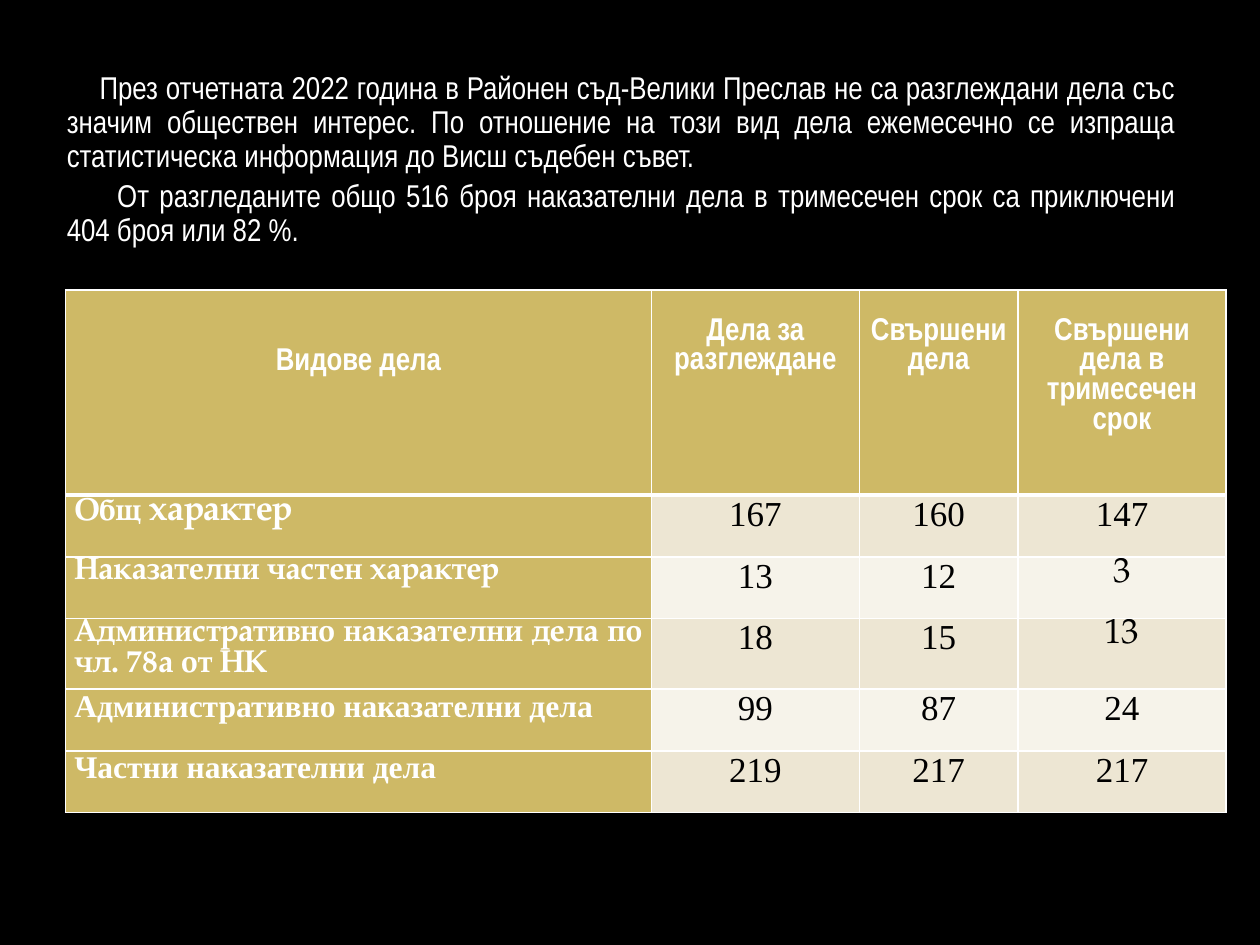
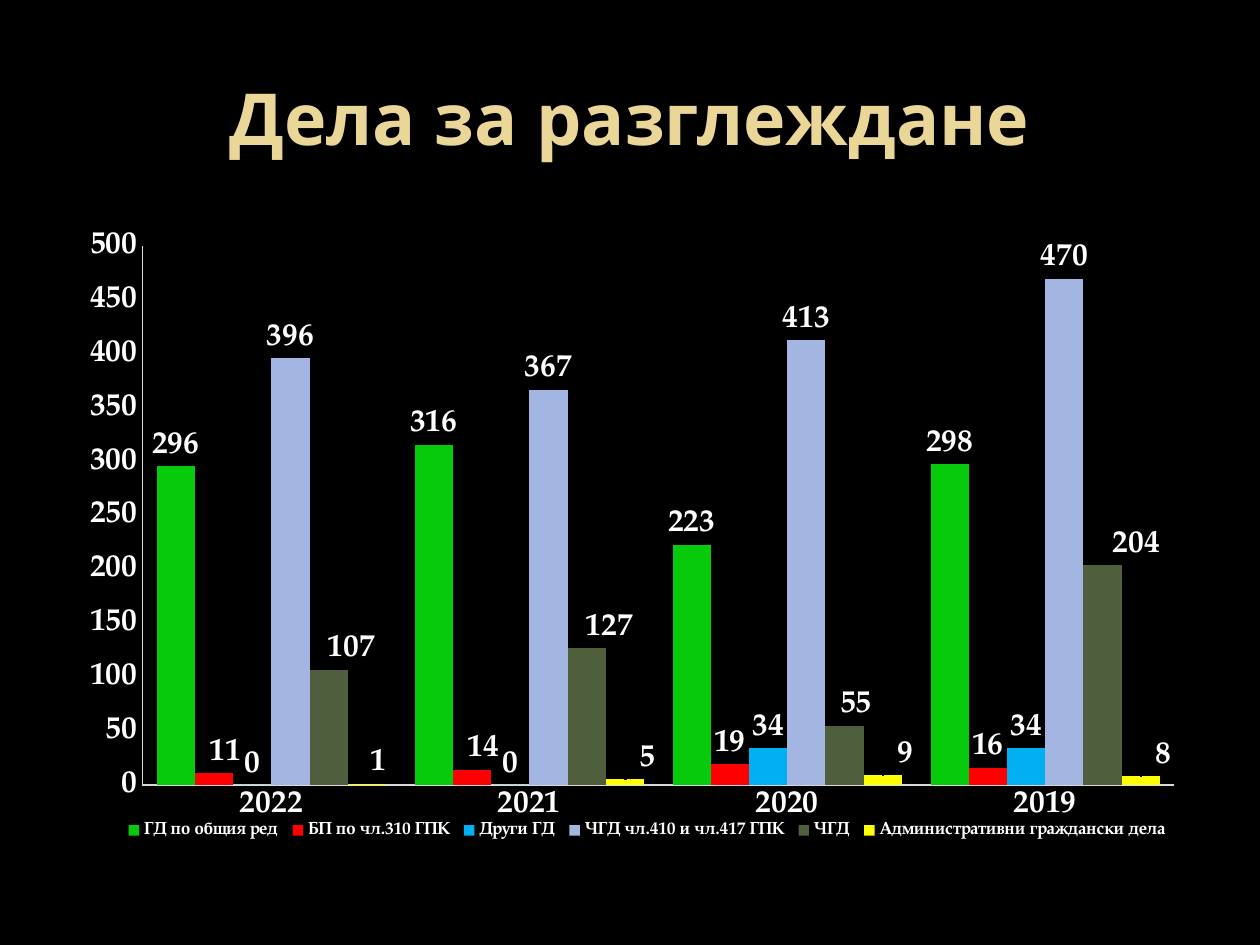
from dataclasses import dataclass, replace

from lxml import etree
from pptx import Presentation
from pptx.chart.data import CategoryChartData
from pptx.dml.color import RGBColor
from pptx.enum.chart import XL_CHART_TYPE as Kind
from pptx.enum.chart import XL_LABEL_POSITION as Spot
from pptx.enum.chart import XL_LEGEND_POSITION as Side
from pptx.enum.chart import XL_TICK_MARK as Tick
from pptx.enum.text import MSO_ANCHOR as Anchor
from pptx.enum.text import MSO_AUTO_SIZE as Fit
from pptx.enum.text import PP_ALIGN as Align
from pptx.oxml import parse_xml
from pptx.oxml.ns import qn
from pptx.util import Inches, Pt

BLACK, WHITE, GREY = "000000", "FFFFFF", "D9D9D9"
GOLD, SAND, CREAM, PALE = "CEB966", "EDE6D3", "F6F3EA", "EAD696"
NARROW, SANS = "Arial Narrow", "Open Sans"
PAGELLA, TIMES = "TeX Gyre Pagella", "Times New Roman"


@dataclass(frozen=True)
class Style:
    face: str
    size: float
    color: str = WHITE
    bold: bool = False
    align: Align = Align.CENTER
    lead: float = 1.0


@dataclass(frozen=True)
class Case:
    """A table row: label, its typeface, counts and the typeface of the last count."""
    label: str
    face: str
    counts: tuple[int, int, int]
    last: str = TIMES
    tail: str = ""


@dataclass(frozen=True)
class Group:
    """A chart series; shifts moves labels sideways, as shares of the chart width."""
    name: str
    color: str
    counts: tuple[int, ...]
    shifts: tuple[float, ...] = ()


TITLE = Style(SANS, 41, PALE, True)
BODY = Style(NARROW, 18, align=Align.JUSTIFY, lead=0.9)
HEAD = Style(NARROW, 18, bold=True)
LABEL = Style(PAGELLA, 18, bold=True, align=Align.JUSTIFY)
COUNT = Style(TIMES, 20, BLACK)

NOTES = (
    (0.26, "През отчетната 2022 година в Районен съд-Велики Преслав не са разглеждани "
           "дела със значим обществен интерес. По отношение на този вид дела ежемесечно "
           "се изпраща статистическа информация до Висш съдебен съвет."),
    (0.4, "От разгледаните общо 516 броя наказателни дела в тримесечен срок са "
          "приключени 404 броя или 82 %."),
)
HEADS = ("Видове дела", "Дела за разглеждане", "Свършени дела",
         "Свършени дела в тримесечен срок")
CASES = (
    Case("Общ", PAGELLA, (167, 160, 147), tail=" характер"),
    Case("Наказателни частен характер", PAGELLA, (13, 12, 3), PAGELLA),
    Case("Административно наказателни дела по чл. 78а от НК", PAGELLA,
         (18, 15, 13), PAGELLA),
    Case("Административно наказателни дела", TIMES, (99, 87, 24)),
    Case("Частни наказателни дела", TIMES, (219, 217, 217)),
)
WIDTHS = (4.65, 1.65, 1.26, 1.65)
HEIGHTS = (1.63, 0.49, 0.49, 0.56, 0.49, 0.49)

YEARS = ("2022", "2021", "2020", "2019")
GROUPS = (
    Group("ГД по общия ред", "05CB0A", (296, 316, 223, 298)),
    Group("БП по чл.310 ГПК", "FF0000", (11, 14, 19, 16), (0.01, 0.01)),
    Group("Други ГД", "00B0F0", (0, 0, 34, 34)),
    Group("ЧГД чл.410 и чл.417 ГПК", "A3B6E2", (396, 367, 413, 470)),
    Group("ЧГД", "4F5E3C", (107, 127, 55, 204), (0.02, 0.02, 0.01, 0.03)),
    Group("Административни граждански дела", "FFFF00", (1, 5, 9, 8),
          (0.01, 0.02, 0.02, 0.02)),
)


def rgb(code: str) -> RGBColor:
    return RGBColor.from_string(code)


def dress(font, style: Style) -> None:
    font.name, font.size, font.bold = style.face, Pt(style.size), style.bold
    font.color.rgb = rgb(style.color)


def format_para(para, style: Style) -> None:
    para.alignment, para.line_spacing = style.align, style.lead
    for run in para.runs:
        dress(run.font, style)


def place(shape, left: float, top: float, width: float, height: float) -> None:
    shape.left, shape.top = Inches(left), Inches(top)
    shape.width, shape.height = Inches(width), Inches(height)


def set_borders(cell, top: float, bottom: float) -> None:
    """White cell edges, widths in points."""
    props = cell._tc.get_or_add_tcPr()
    for side, width in (("L", 1), ("R", 1), ("T", top), ("B", bottom)):
        edge = etree.SubElement(props, qn(f"a:ln{side}"), w=str(Pt(width)))
        fill = etree.SubElement(edge, qn("a:solidFill"))
        etree.SubElement(fill, qn("a:srgbClr"), val=WHITE)


def fill_cell(cell, text: str, style: Style, fill: str, top: float = 1,
              bottom: float = 1, inset: float = 0) -> None:
    set_borders(cell, top, bottom)
    cell.fill.solid()
    cell.fill.fore_color.rgb = rgb(fill)
    cell.margin_left = cell.margin_right = Inches(0.07)
    cell.margin_top, cell.margin_bottom = Inches(inset), 0
    cell.text_frame.text = text
    format_para(cell.text_frame.paragraphs[0], style)


def add_notes(slide) -> None:
    body = slide.placeholders[1]
    place(body, 0.43, 0.52, 9, 1.73)
    frame = body.text_frame
    frame.text = "\n".join(text for _, text in NOTES)
    frame.auto_size = Fit.NONE
    for para, (indent, _) in zip(frame.paragraphs, NOTES):
        format_para(para, BODY)
        para.space_before = Pt(3.6)
        props = para._p.get_or_add_pPr()
        props.set("marL", "0")
        props.set("indent", str(Inches(indent)))
        etree.SubElement(props, qn("a:buNone"))


def add_cases(slide) -> None:
    frame = slide.shapes.add_table(len(HEIGHTS), len(WIDTHS), Inches(0.52), Inches(2.3),
                                   Inches(sum(WIDTHS)), Inches(sum(HEIGHTS)))
    table = frame.table
    table.first_row = table.horz_banding = False
    for col, width in zip(table.columns, WIDTHS):
        col.width = Inches(width)
    for row, height in zip(table.rows, HEIGHTS):
        row.height = Inches(height)
    for col, head in enumerate(HEADS):
        fill_cell(table.cell(0, col), head, HEAD, GOLD, bottom=3,
                  inset=0.22 if col else 0.46)
    for row, case in enumerate(CASES, 1):
        top = 3 if row == 1 else 1
        faces = (case.face, TIMES, TIMES, case.last)
        band = SAND if row % 2 else CREAM
        for col, (text, face) in enumerate(zip((case.label, *case.counts), faces)):
            style = replace(COUNT if col else LABEL, face=face)
            fill_cell(table.cell(row, col), str(text), style, band if col else GOLD, top)
        if case.tail:
            run = table.cell(row, 0).text_frame.paragraphs[0].add_run()
            run.text = case.tail
            dress(run.font, replace(LABEL, size=20))


def make_layout(x: float, y: float, w: float = 0, h: float = 0, inner: bool = False):
    """Manual chart layout; without a size it is an offset."""
    parts = '<c:layoutTarget val="inner"/>' if inner else ""
    if w:
        parts += '<c:xMode val="edge"/><c:yMode val="edge"/>'
    parts += f'<c:x val="{x}"/><c:y val="{y}"/>'
    if w:
        parts += f'<c:w val="{w}"/><c:h val="{h}"/>'
    space = "http://schemas.openxmlformats.org/drawingml/2006/chart"
    return parse_xml(f'<c:layout xmlns:c="{space}"><c:manualLayout>{parts}'
                     "</c:manualLayout></c:layout>")


def set_layout(parent, after: str, layout) -> None:
    """Put the layout behind the named child, or first when there is none."""
    for old in parent.findall(qn("c:layout")):
        parent.remove(old)
    mark = parent.find(qn(after)) if after else None
    if mark is None:
        parent.insert(0, layout)
    else:
        mark.addnext(layout)


def style_group(series, group: Group, style: Style) -> None:
    series.format.fill.solid()
    series.format.fill.fore_color.rgb = rgb(group.color)
    series.invert_if_negative = False
    labels = series.data_labels
    labels.show_value, labels.position = True, Spot.OUTSIDE_END
    dress(labels.font, style)
    for index, shift in enumerate(group.shifts):
        label = series.points[index].data_label
        dress(label.font, style)
        label.position = Spot.OUTSIDE_END
        for item in labels._element.findall(qn("c:dLbl")):
            if item.find(qn("c:idx")).get("val") == str(index):
                set_layout(item, "c:idx", make_layout(shift, 0))


def add_bars(slide) -> None:
    data = CategoryChartData()
    data.categories = YEARS
    for group in GROUPS:
        data.add_series(group.name, group.counts)
    chart = slide.shapes.add_chart(Kind.COLUMN_CLUSTERED, Inches(0.5), Inches(1.75),
                                   Inches(9), Inches(5.15), data).chart
    small = Style(PAGELLA, 10, bold=True)
    large = replace(small, size=18)
    dress(chart.font, small)
    chart.has_title = False
    chart.has_legend = True
    legend = chart.legend
    legend.position, legend.include_in_layout = Side.BOTTOM, False
    dress(legend.font, small)
    for axis in (chart.category_axis, chart.value_axis):
        axis.major_tick_mark = axis.minor_tick_mark = Tick.NONE
        axis.has_major_gridlines = False
        axis.format.line.color.rgb = rgb(GREY)
        dress(axis.tick_labels.font, large)
    scale = chart.value_axis
    scale.minimum_scale, scale.maximum_scale, scale.major_unit = 0, 500, 50
    plot = chart.plots[0]
    plot.gap_width, plot.overlap, plot.vary_by_categories = 75, 0, False
    for series, group in zip(plot.series, GROUPS):
        style_group(series, group, large)
    area = chart._chartSpace.chart.plotArea
    set_layout(area, "", make_layout(0.07, 0.04, 0.91, 0.83, inner=True))
    set_layout(legend._element, "c:legendPos", make_layout(0.05, 0.92, 0.93, 0.04))


def add_title(slide, text: str) -> None:
    title = slide.shapes.title
    place(title, 0.5, 0.3, 9, 1.25)
    frame = title.text_frame
    frame.text = text
    frame.auto_size, frame.vertical_anchor = Fit.NONE, Anchor.MIDDLE
    format_para(frame.paragraphs[0], TITLE)


def main() -> None:
    deck = Presentation()
    deck.slide_width, deck.slide_height = Inches(10), Inches(7.5)
    back = deck.slide_master.background.fill
    back.solid()
    back.fore_color.rgb = rgb(BLACK)

    crime = deck.slides.add_slide(deck.slide_layouts[1])
    title = crime.shapes.title._element
    title.getparent().remove(title)
    add_notes(crime)
    add_cases(crime)

    civil = deck.slides.add_slide(deck.slide_layouts[5])
    add_title(civil, "Дела за разглеждане")
    add_bars(civil)
    deck.save("out.pptx")


if __name__ == "__main__":
    main()
